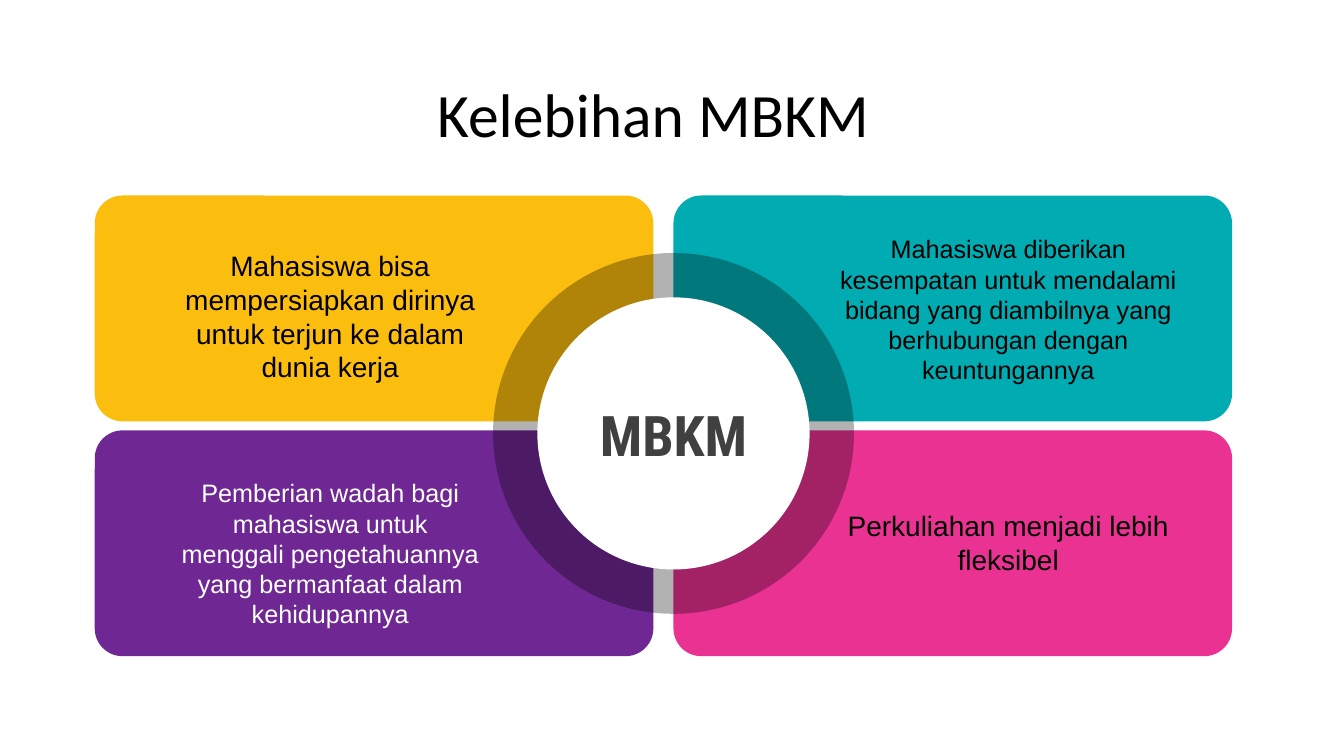
from lxml import etree
from pptx import Presentation
from pptx import util as u
from pptx.dml.color import RGBColor
from pptx.enum import shapes, text
from pptx.oxml.ns import qn

COLORS = {
    "yellow": "FCBE0E", "teal": "00ACB2", "purple": "6F2893", "pink": "EA3293",
    "black": "000000", "white": "FFFFFF", "gray": "404040",
}
SLIDE_WIDTH, SLIDE_HEIGHT = 13.33, 7.5
GRID_LEFT, GRID_TOP = 0.94, 1.94
CARD_WIDTH, CARD_HEIGHT = 5.54, 2.24
COLUMN_STEP, ROW_STEP = 5.74, 2.33
HUB_X, HUB_Y = 6.68, 4.3

CARDS = [
    (0, 1, "purple", "white", 18, (1.67, 4.69, 3.21, 1.62),
     "Pemberian wadah bagi mahasiswa untuk menggali pengetahuannya yang bermanfaat dalam kehidupannya"),
    (1, 1, "pink", "black", 20, (8.11, 5, 3.78, 0.77),
     "Perkuliahan menjadi lebih fleksibel"),
    (1, 0, "teal", "black", 18, (8.04, 2.27, 3.92, 1.62),
     "Mahasiswa diberikan kesempatan untuk mendalami bidang yang diambilnya yang berhubungan dengan keuntungannya"),
    (0, 0, "yellow", "black", 20, (1.67, 2.42, 3.21, 1.45),
     "Mahasiswa bisa mempersiapkan dirinya untuk terjun ke dalam dunia kerja"),
]


def inches(box):
    return [u.Inches(length) for length in box]


def write_text(shape, content, size, color, font="Arial", bold=False,
               anchor=text.MSO_ANCHOR.TOP, line_spacing=None):
    frame = shape.text_frame
    frame.word_wrap = True
    frame.auto_size = text.MSO_AUTO_SIZE.NONE
    frame.vertical_anchor = anchor
    frame.text = content
    paragraph = frame.paragraphs[0]
    paragraph.alignment = text.PP_ALIGN.CENTER
    paragraph.line_spacing = line_spacing
    run_font = paragraph.runs[0].font
    run_font.name, run_font.size, run_font.bold = font, u.Pt(size), bold
    run_font.color.rgb = RGBColor.from_string(COLORS[color])


def add_label(slide, box, content, **text_format):
    write_text(slide.shapes.add_textbox(*inches(box)), content, **text_format)


def add_filled(slide, kind, box, color, opacity=None):
    shape = slide.shapes.add_shape(kind, *inches(box))
    shape.shadow.inherit = False
    shape.line.fill.background()
    shape.fill.solid()
    shape.fill.fore_color.rgb = RGBColor.from_string(COLORS[color])
    if opacity is not None:
        fill_color = shape.fill._xPr.find(".//" + qn("a:srgbClr"))
        etree.SubElement(fill_color, qn("a:alpha"), val=str(opacity * 1000))
    return shape


def add_card(slide, column, row, color):
    box = (GRID_LEFT + column * COLUMN_STEP, GRID_TOP + row * ROW_STEP,
           CARD_WIDTH, CARD_HEIGHT)
    card = add_filled(slide, shapes.MSO_SHAPE.ROUNDED_RECTANGLE, box, color)
    card.adjustments[0] = 0.123


def add_disc(slide, diameter, color, opacity=None):
    box = (HUB_X - diameter / 2, HUB_Y - diameter / 2, diameter, diameter)
    add_filled(slide, shapes.MSO_SHAPE.OVAL, box, color, opacity)


def add_title(slide, content):
    title = slide.shapes.title
    title.left, title.top, title.width, title.height = inches((0.15, 0.77, 12.66, 0.79))
    write_text(title, content, size=44, color="black", font="Calibri",
               anchor=text.MSO_ANCHOR.MIDDLE, line_spacing=0.9)


def main():
    presentation = Presentation()
    presentation.slide_width = u.Inches(SLIDE_WIDTH)
    presentation.slide_height = u.Inches(SLIDE_HEIGHT)
    slide = presentation.slides.add_slide(presentation.slide_layouts[5])
    add_title(slide, "Kelebihan MBKM")
    for column, row, fill, *_ in CARDS:
        add_card(slide, column, row, fill)
    add_disc(slide, 3.58, "black", opacity=30)
    add_disc(slide, 2.7, "white")
    for _, _, _, color, size, box, content in CARDS:
        add_label(slide, box, content, size=size, color=color)
    add_label(slide, (5.32, 3.92, 2.72, 0.77), "MBKM", size=40, color="gray",
              font="Roboto Condensed", bold=True)
    presentation.save("out.pptx")


if __name__ == "__main__":
    main()
